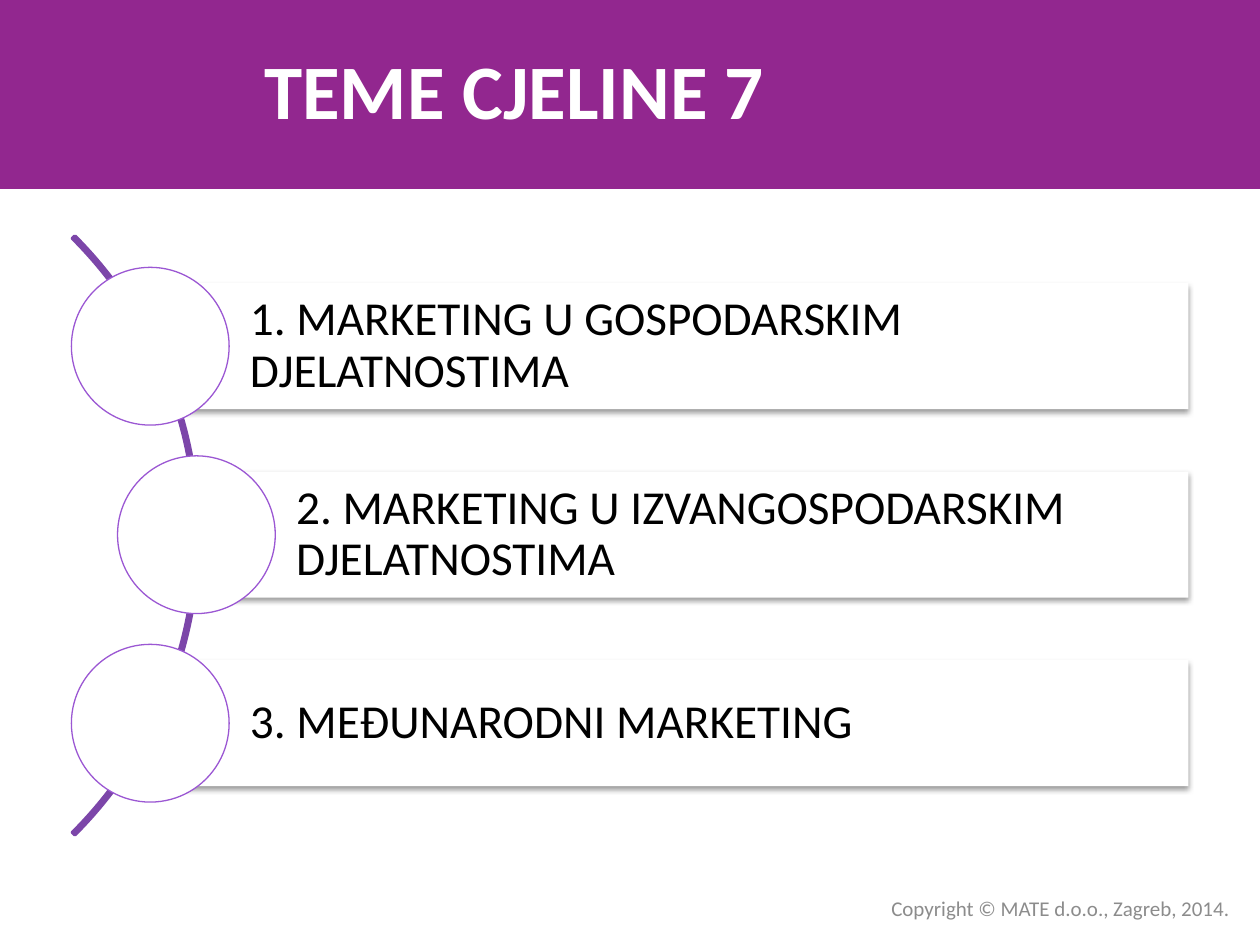
"""Build the topic overview slide for unit 7."""
from lxml import etree
from pptx import Presentation
from pptx.dml.color import RGBColor
from pptx.enum import shapes, text
from pptx.oxml import ns
from pptx.util import Cm, Pt


def tint(code):
    return RGBColor.from_string(code)


def write(shape, words, size, color, align, bold=False):
    frame = shape.text_frame
    frame.word_wrap = True
    frame.vertical_anchor = text.MSO_ANCHOR.MIDDLE
    line = frame.paragraphs[0]
    line.alignment = align
    run = line.add_run()
    run.text = words
    run.font.name = "Calibri"
    run.font.size = Pt(size)
    run.font.bold = bold
    run.font.color.rgb = tint(color)
    return frame


kind = shapes.MSO_SHAPE
side = text.PP_ALIGN
deck = Presentation()
deck.slide_width, deck.slide_height = Cm(25.4), Cm(19.05)
slide = deck.slides.add_slide(deck.slide_layouts[6])
items = slide.shapes

band = items.add_shape(kind.RECTANGLE, 0, 0, deck.slide_width, Cm(3.81))
band.shadow.inherit = False
band.fill.solid()
band.fill.fore_color.rgb = tint("92278F")
band.line.fill.background()

title = items.add_textbox(0, Cm(0.2), Cm(20.75), Cm(3.18))
write(title, "TEME CJELINE 7", 44, "FFFFFF", side.CENTER, True)

arc = items.add_shape(kind.BLOCK_ARC, Cm(-13.06), Cm(2.26), Cm(17.07), Cm(17.07))
arc.shadow.inherit = False
for spot, value in enumerate((189, 27, 0.004)):
    arc.adjustments[spot] = value
arc.fill.background()
arc.line.color.rgb = tint("7C46A9")
arc.line.width = Pt(2)

topics = [
    (3.03, "1. MARKETING U GOSPODARSKIM DJELATNOSTIMA"),
    (3.96, "2. MARKETING U IZVANGOSPODARSKIM DJELATNOSTIMA"),
    (3.03, "3. MEĐUNARODNI MARKETING"),
]
right, top, step = 23.96, 6.98, 3.8
high, disc = 2.54, 3.18

for row, (left, words) in enumerate(topics):
    mid = top + row * step
    bar = items.add_shape(
        kind.RECTANGLE, Cm(left), Cm(mid - high / 2), Cm(right - left), Cm(high))
    bar.fill.solid()
    bar.fill.fore_color.rgb = tint("FFFFFF")
    bar.line.fill.background()
    bar.shadow.inherit = False
    glow = etree.SubElement(
        bar.element.spPr.find(ns.qn("a:effectLst")), ns.qn("a:outerShdw"),
        blurRad="40000", dist="20000", dir="5400000", rotWithShape="0")
    shade = etree.SubElement(glow, ns.qn("a:srgbClr"), val="000000")
    etree.SubElement(shade, ns.qn("a:alpha"), val="38000")

    frame = write(bar, words, 27, "000000", side.LEFT)
    frame.margin_left = Cm(2.01)
    frame.margin_top = frame.margin_right = frame.margin_bottom = Cm(0.18)
    frame.paragraphs[0].line_spacing = 0.9

    ring = items.add_shape(
        kind.OVAL, Cm(left - disc / 2), Cm(mid - disc / 2), Cm(disc), Cm(disc))
    ring.shadow.inherit = False
    ring.fill.solid()
    ring.fill.fore_color.rgb = tint("FFFFFF")
    ring.line.color.rgb = tint("9B57D3")
    ring.line.width = Pt(0.75)

foot = items.add_textbox(Cm(11.91), Cm(17.93), Cm(13.13), Cm(0.76))
write(foot, "Copyright © MATE d.o.o., Zagreb, 2014.", 12, "8C8C8C", side.RIGHT)

deck.save("out.pptx")
